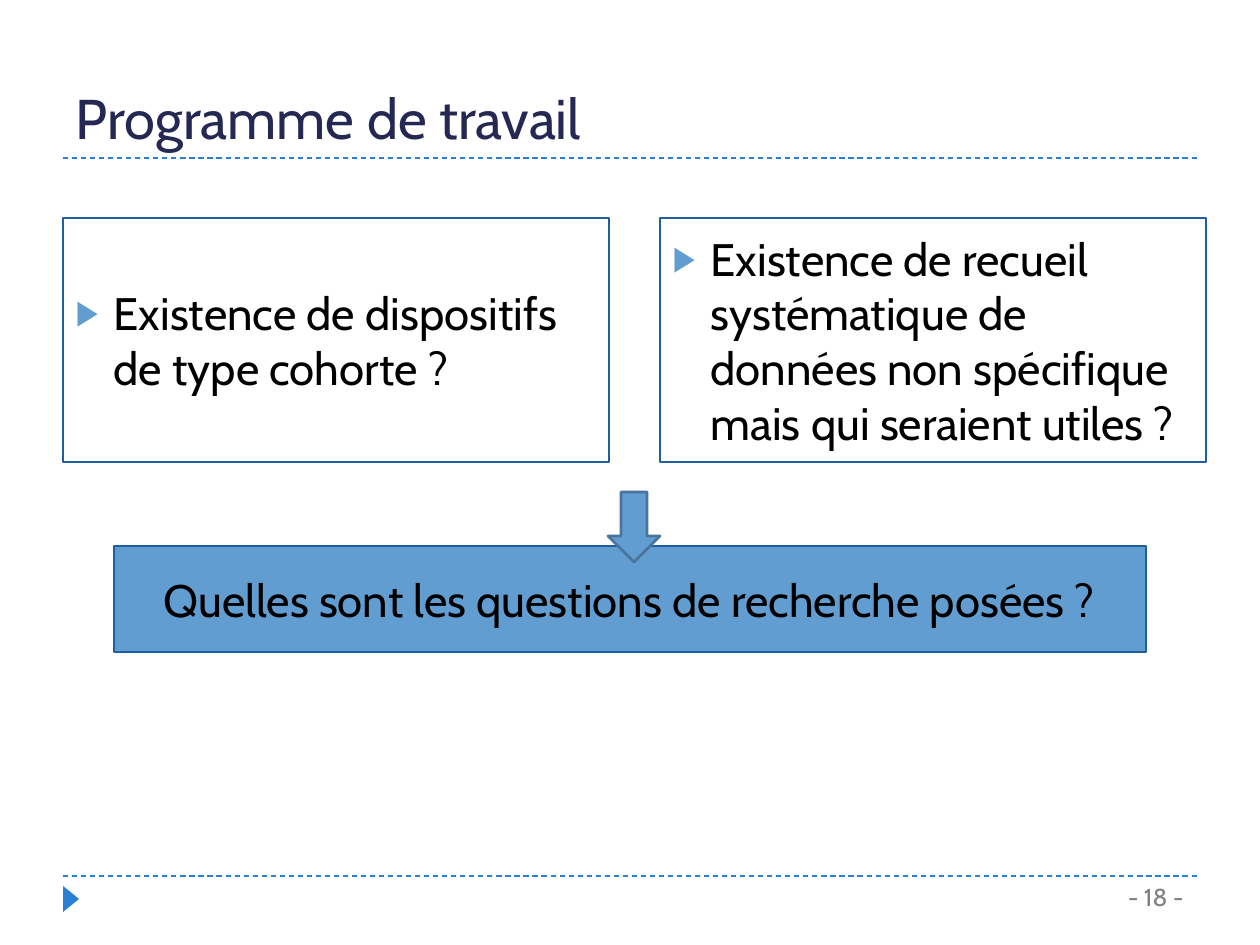
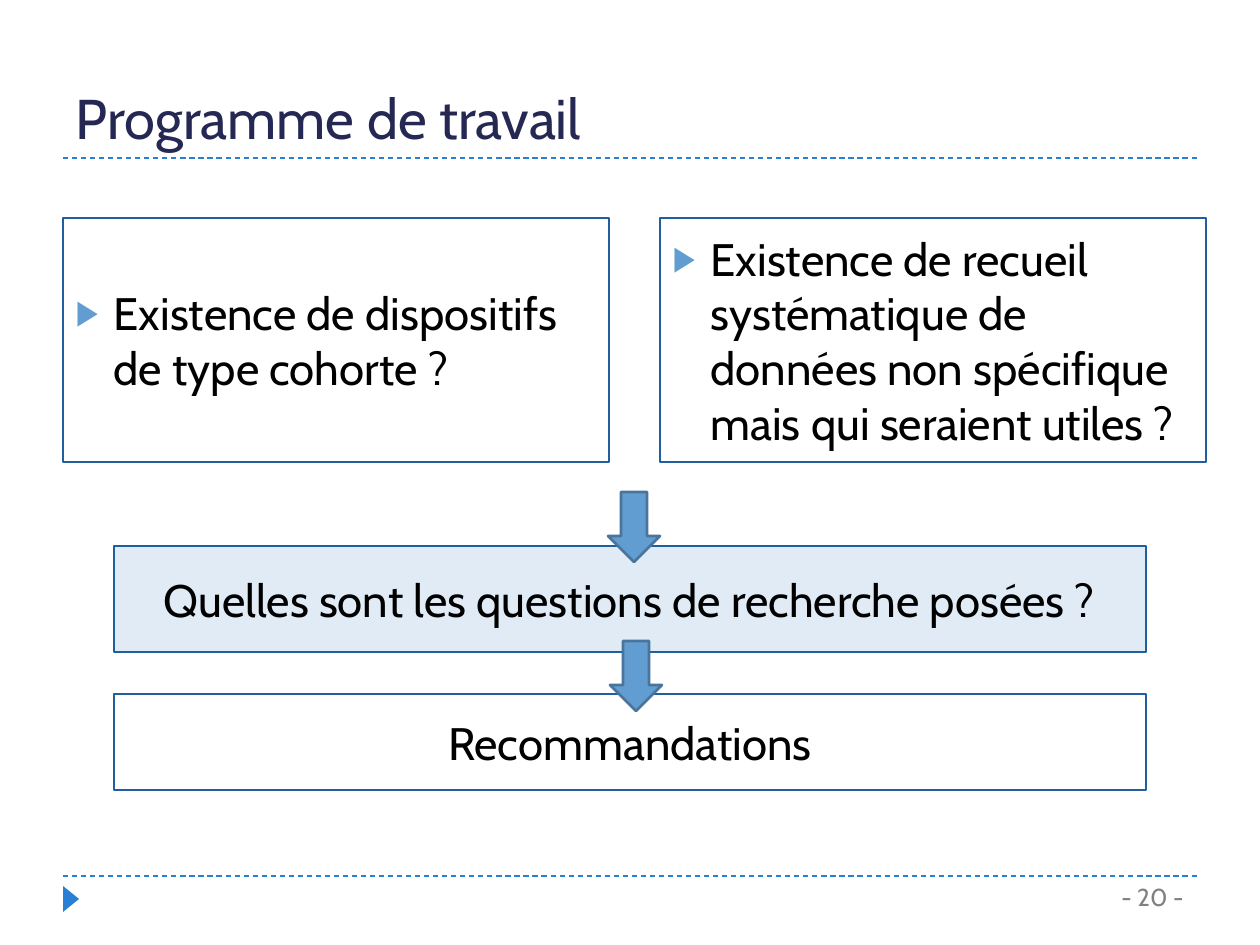
from lxml import etree
from pptx import Presentation
from pptx import util as u
from pptx.dml.color import RGBColor
from pptx.enum import dml, shapes, text
from pptx.oxml import ns

PX = u.Inches(1) / 126
FONT = "Cabin"
NAVY, BLUE, SKY, PALE = "242852", "297FD5", "629DD1", "E0EBF6"
BORDER, ARROW_EDGE, GREY, BLACK = "1F5FA0", "49749B", "808080", "000000"

TITLE = "Programme de travail"
COHORTS = "Existence de dispositifs de type cohorte ?"
DATA = ("Existence de recueil systématique de données non spécifique "
        "mais qui seraient utiles ?")
QUESTIONS = "Quelles sont les questions de recherche posées ?"
ADVICE = "Recommandations"


def px(*lengths):
    return [u.Emu(round(n * PX)) for n in lengths]


def colour(hex_code):
    return RGBColor.from_string(hex_code)


def place(shape, left, top, width, height):
    shape.left, shape.top, shape.width, shape.height = px(left, top, width, height)


def paint(shape, fill=None, line=None, width=0.75):
    if fill:
        shape.fill.solid()
        shape.fill.fore_color.rgb = colour(fill)
    else:
        shape.fill.background()
    if line:
        shape.line.color.rgb = colour(line)
        shape.line.width = u.Pt(width)
    else:
        shape.line.fill.background()


def write(shape, words, size, ink, align, anchor):
    frame = shape.text_frame
    frame.word_wrap = True
    frame.auto_size = text.MSO_AUTO_SIZE.NONE
    frame.vertical_anchor = anchor
    paragraph = frame.paragraphs[0]
    paragraph.alignment = align
    run = paragraph.add_run()
    run.text = words
    run.font.size = u.Pt(size)
    run.font.name = FONT
    run.font.color.rgb = colour(ink)
    return paragraph


def add_preset(slide, kind, box, fill=None, line=None, width=0.75):
    shape = slide.shapes.add_shape(kind, *px(*box))
    shape.shadow.inherit = False
    paint(shape, fill, line, width)
    return shape


def add_dashed_rule(slide, y):
    rule = slide.shapes.add_connector(
        shapes.MSO_CONNECTOR.STRAIGHT, *px(63, y, 1197, y))
    rule.line.color.rgb = colour(BLUE)
    rule.line.width = u.Pt(0.75)
    rule.line.dash_style = dml.MSO_LINE.DASH
    etree.SubElement(rule._element.spPr, ns.qn("a:effectLst"))


def add_bullet(paragraph):
    indent = px(38)[0]
    props = paragraph._p.get_or_add_pPr()
    props.set("marL", str(indent))
    props.set("indent", str(-indent))
    tint = etree.SubElement(props, ns.qn("a:buClr"))
    etree.SubElement(tint, ns.qn("a:srgbClr"), val=SKY)
    etree.SubElement(props, ns.qn("a:buSzPct"), val="76000")
    etree.SubElement(props, ns.qn("a:buChar"), char="▶")


def fill_list(body, left, words):
    place(body, left, 218, 546, 244)
    paint(body, line=BORDER)
    paragraph = write(body, words, 26, BLACK,
                      text.PP_ALIGN.LEFT, text.MSO_ANCHOR.MIDDLE)
    paragraph.space_before = u.Pt(6)
    add_bullet(paragraph)


def add_bar(slide, top, height, words, fill=None):
    bar = add_preset(slide, shapes.MSO_SHAPE.RECTANGLE,
                     (114, top, 1032, height), fill, BORDER)
    paragraph = write(bar, words, 26, BLACK,
                      text.PP_ALIGN.CENTER, text.MSO_ANCHOR.MIDDLE)
    paragraph.space_before = u.Pt(6)


def add_down_arrow(slide, left, top):
    add_preset(slide, shapes.MSO_SHAPE.DOWN_ARROW,
               (left, top, 52, 70), SKY, ARROW_EDGE, 1.5)


def add_programme_slide(deck, number):
    slide = deck.slides.add_slide(deck.slide_layouts[3])
    for y in (876, 158):
        add_dashed_rule(slide, y)
    marker = add_preset(slide, shapes.MSO_SHAPE.ISOSCELES_TRIANGLE,
                        (58, 891, 26, 16), BLUE)
    marker.rotation = 90

    title, cohorts, data = slide.placeholders
    place(title, 63, 21, 1134, 136)
    write(title, TITLE, 32, NAVY, text.PP_ALIGN.LEFT, text.MSO_ANCHOR.BOTTOM)
    page = slide.shapes.add_textbox(*px(399, 876, 797, 50))
    write(page, f"- {number} -", 14, GREY,
          text.PP_ALIGN.RIGHT, text.MSO_ANCHOR.TOP)
    fill_list(cohorts, 63, COHORTS)
    fill_list(data, 660, DATA)
    return slide


def main():
    deck = Presentation()
    deck.slide_width, deck.slide_height = px(1260, 945)

    questions = add_programme_slide(deck, 18)
    add_bar(questions, 546, 106, QUESTIONS, SKY)
    add_down_arrow(questions, 608, 492)

    advice = add_programme_slide(deck, 20)
    add_bar(advice, 546, 106, QUESTIONS, PALE)
    add_bar(advice, 694, 96, ADVICE)
    add_down_arrow(advice, 608, 492)
    add_down_arrow(advice, 610, 641)

    deck.save("out.pptx")


if __name__ == "__main__":
    main()
